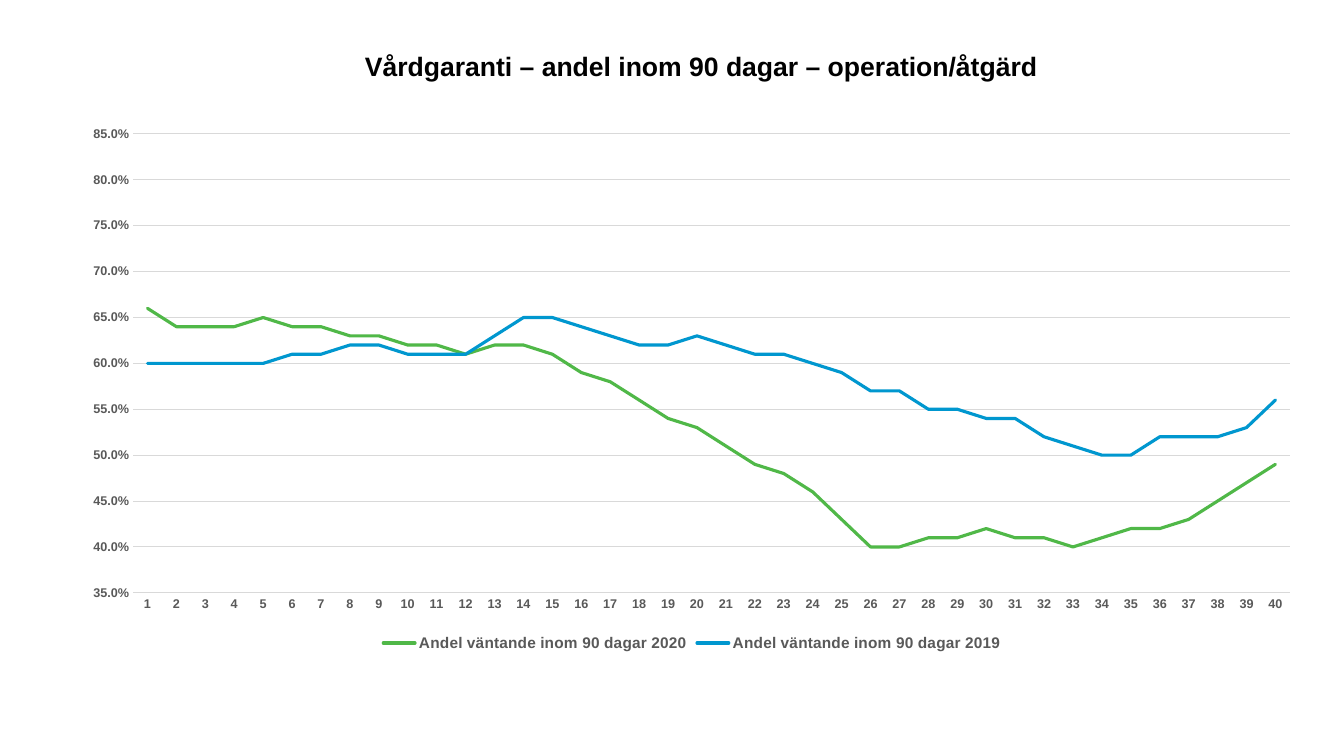
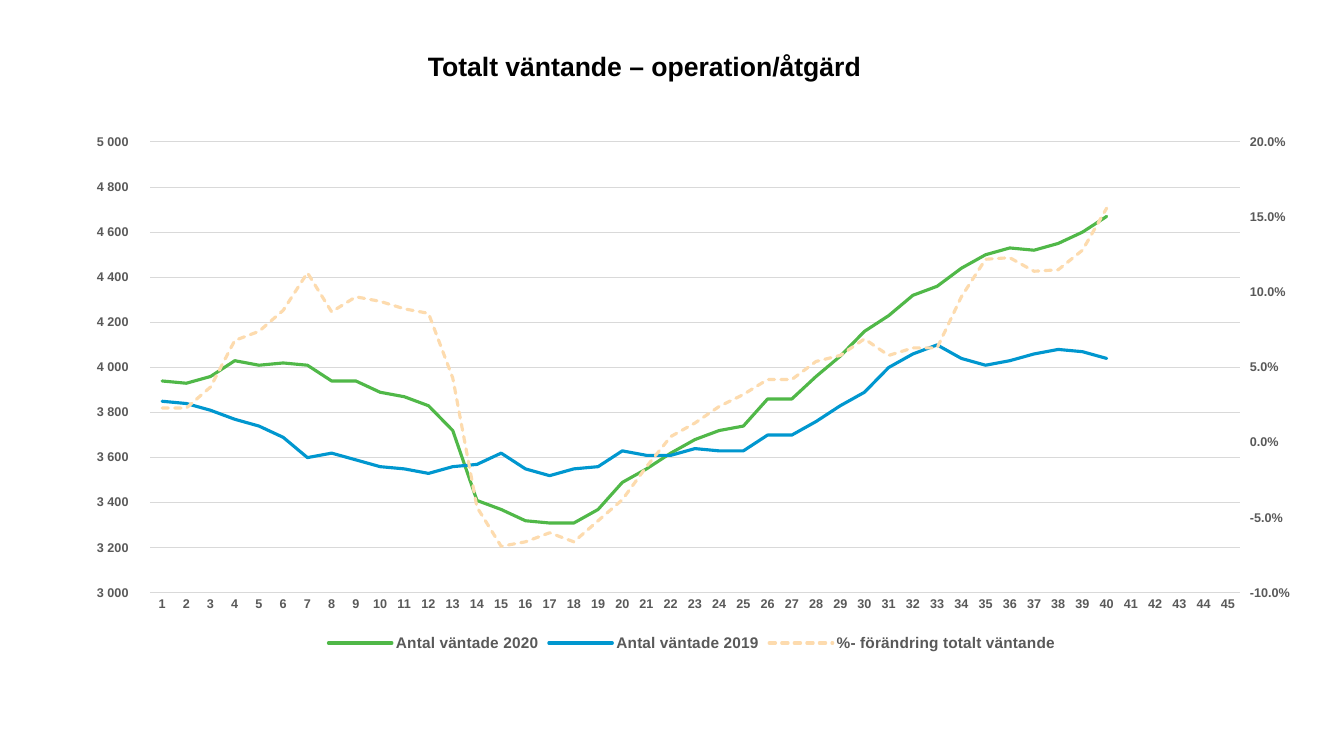
from copy import deepcopy

from lxml import etree
from pptx import Presentation
from pptx import util as u
from pptx.chart.data import CategoryChartData
from pptx.dml.color import RGBColor
from pptx.enum import chart as ch
from pptx.enum import dml

# Shared style
PX = 914400 / 100.8
FONT = "Arial"
BLACK, GREY, GRID = "000000", "595959", "D9D9D9"
GREEN, BLUE, PEACH = "50B848", "0097CF", "FDDBAE"
PERCENT = "0.0%"
KRONOR = r"_-* #\ ##0\ _k_r_-;\-* #\ ##0\ _k_r_-"
C_NS = "http://schemas.openxmlformats.org/drawingml/2006/chart"

# Content: boxes are left, top, width, height in px
SLIDES = [
    {
        "title": "Vårdgaranti – andel inom 90 dagar – operation/åtgärd",
        "title_box": (355, 45, 746, 42),
        "chart_box": (69, 116, 1246, 540),
        "plot_box": (133, 134, 1157, 459),
        "weeks": 40,
        "axis": (0.35, 0.85, 0.05, PERCENT),
        "series": [
            ("Andel väntande inom 90 dagar 2020", GREEN, [
                0.66, 0.64, 0.64, 0.64, 0.65, 0.64, 0.64, 0.63, 0.63, 0.62,
                0.62, 0.61, 0.62, 0.62, 0.61, 0.59, 0.58, 0.56, 0.54, 0.53,
                0.51, 0.49, 0.48, 0.46, 0.43, 0.4, 0.4, 0.41, 0.41, 0.42,
                0.41, 0.41, 0.4, 0.41, 0.42, 0.42, 0.43, 0.45, 0.47, 0.49]),
            ("Andel väntande inom 90 dagar 2019", BLUE, [
                0.6, 0.6, 0.6, 0.6, 0.6, 0.61, 0.61, 0.62, 0.62, 0.61,
                0.61, 0.61, 0.63, 0.65, 0.65, 0.64, 0.63, 0.62, 0.62, 0.63,
                0.62, 0.61, 0.61, 0.6, 0.59, 0.57, 0.57, 0.55, 0.55, 0.54,
                0.54, 0.52, 0.51, 0.5, 0.5, 0.52, 0.52, 0.52, 0.53, 0.56]),
        ],
    },
    {
        "title": "Totalt väntande – operation/åtgärd",
        "title_box": (418, 45, 690, 42),
        "chart_box": (69, 124, 1246, 532),
        "plot_box": (150, 142, 1090, 451),
        "weeks": 45,
        "axis": (3000, 5000, 200, KRONOR),
        "right_axis": (-0.1, 0.2, 0.05, PERCENT),
        "series": [
            ("Antal väntade 2020", GREEN, [
                3940, 3930, 3960, 4030, 4010, 4020, 4010, 3940, 3940, 3890,
                3870, 3830, 3720, 3410, 3370, 3320, 3310, 3310, 3370, 3490,
                3550, 3620, 3680, 3720, 3740, 3860, 3860, 3960, 4050, 4160,
                4230, 4320, 4360, 4440, 4500, 4530, 4520, 4550, 4600, 4670]),
            ("Antal väntade 2019", BLUE, [
                3850, 3840, 3810, 3770, 3740, 3690, 3600, 3620, 3590, 3560,
                3550, 3530, 3560, 3570, 3620, 3550, 3520, 3550, 3560, 3630,
                3610, 3610, 3640, 3630, 3630, 3700, 3700, 3760, 3830, 3890,
                4000, 4060, 4100, 4040, 4010, 4030, 4060, 4080, 4070, 4040]),
            ("%- förändring totalt väntande", PEACH, [
                0.023, 0.023, 0.037, 0.068, 0.074, 0.088, 0.113, 0.087, 0.097, 0.094,
                0.089, 0.086, 0.043, -0.043, -0.069, -0.066, -0.06, -0.066, -0.052, -0.038,
                -0.016, 0.004, 0.013, 0.024, 0.032, 0.042, 0.042, 0.054, 0.058, 0.069,
                0.058, 0.063, 0.063, 0.097, 0.122, 0.123, 0.114, 0.115, 0.128, 0.156]),
        ],
    },
]


def px(*lengths):
    return [u.Emu(round(n * PX)) for n in lengths]


def rgb(code):
    return RGBColor.from_string(code)


def style_font(font, size, color, bold=True):
    for name, value in {"name": FONT, "size": u.Pt(size), "bold": bold}.items():
        setattr(font, name, value)
    font.color.rgb = rgb(color)


def style_line(line, color, width):
    line.color.rgb = rgb(color)
    line.width = u.Pt(width)


def c_node(tag, val=None):
    node = etree.Element(f"{{{C_NS}}}{tag}")
    if val is not None:
        node.set("val", str(val))
    return node


def add_title(s, title, box):
    tf = s.shapes.add_textbox(*px(*box)).text_frame
    tf.word_wrap = True
    r = tf.paragraphs[0].add_run()
    r.text = title
    style_font(r.font, 19, BLACK)


def place_plot(area, plot_box, chart_box):
    """Fix the inner plot area as fractions of the chart frame."""
    for old in area.xpath("c:layout"):
        area.remove(old)
    left, top, width, height = chart_box
    x, y, w, h = plot_box
    layout = c_node("layout")
    manual = c_node("manualLayout")
    layout.append(manual)
    parts = {"layoutTarget": "inner", "xMode": "edge", "yMode": "edge",
             "x": (x - left) / width, "y": (y - top) / height,
             "w": w / width, "h": h / height}
    for tag, val in parts.items():
        manual.append(c_node(tag, val))
    area.insert(0, layout)


def add_right_axis(area, low, high, step, code):
    """Move the last series to a second pair of axes."""
    line = area.xpath("c:lineChart")[0]
    second = deepcopy(line)
    line.remove(line.xpath("c:ser")[-1])
    for ser in second.xpath("c:ser")[:-1]:
        second.remove(ser)
    line.addnext(second)

    cat, val = area.xpath("c:catAx")[0], area.xpath("c:valAx")[0]
    right, hidden = deepcopy(val), deepcopy(cat)
    val.addnext(right)
    right.addnext(hidden)
    ids = {cat.xpath("c:axId")[0].get("val"): "5001",
           val.xpath("c:axId")[0].get("val"): "5002"}
    for part in (second, right, hidden):
        for node in part.xpath("c:axId | c:crossAx"):
            node.set("val", ids[node.get("val")])

    right.remove(right.xpath("c:majorGridlines")[0])
    values = {"c:scaling/c:min": low, "c:scaling/c:max": high,
              "c:majorUnit": step, "c:crosses": "max", "c:axPos": "r"}
    for where, value in values.items():
        right.xpath(where)[0].set("val", str(value))
    right.xpath("c:numFmt")[0].set("formatCode", code)
    right.xpath("c:majorTickMark")[0].set("val", "out")
    hidden.xpath("c:delete")[0].set("val", "1")


def add_line_chart(s, item):
    weeks = item["weeks"]
    data = CategoryChartData()
    data.categories = [str(n) for n in range(1, weeks + 1)]
    for name, _, values in item["series"]:
        data.add_series(name, values + [None] * (weeks - len(values)))
    chart = s.shapes.add_chart(
        ch.XL_CHART_TYPE.LINE, *px(*item["chart_box"]), data).chart
    style_font(chart.font, 10, BLACK, False)
    chart.has_title = False
    chart.has_legend = True
    chart.legend.position = ch.XL_LEGEND_POSITION.BOTTOM
    chart.legend.include_in_layout = False
    style_font(chart.legend.font, 11, GREY)

    # Series
    plot = chart.plots[0]
    plot.vary_by_categories = False
    for ser, (_, color, _) in zip(plot.series, item["series"]):
        ser.smooth = False
        style_line(ser.format.line, color, 2.25)
    for ln in chart.element.xpath(".//c:ser/c:spPr/a:ln"):
        ln.set("cap", "rnd")

    # Axes
    cat, val = chart.category_axis, chart.value_axis
    for axis in (cat, val):
        axis.major_tick_mark = axis.minor_tick_mark = ch.XL_TICK_MARK.NONE
        style_font(axis.tick_labels.font, 9, GREY)
    style_line(cat.format.line, GRID, 0.75)
    val.format.line.fill.background()
    val.has_major_gridlines = True
    style_line(val.major_gridlines.format.line, GRID, 0.75)
    val.minimum_scale, val.maximum_scale, val.major_unit, code = item["axis"]
    val.tick_labels.number_format = code
    val.tick_labels.number_format_is_linked = False

    area = chart.element.xpath(".//c:plotArea")[0]
    val_ax = area.xpath("c:valAx")[0]
    if not val_ax.xpath("c:crossBetween"):
        val_ax.xpath("c:crosses")[0].addnext(c_node("crossBetween", "between"))
    place_plot(area, item["plot_box"], item["chart_box"])
    if "right_axis" in item:
        plot.series[-1].format.line.dash_style = dml.MSO_LINE.SQUARE_DOT
        add_right_axis(area, *item["right_axis"])


def main():
    prs = Presentation()
    prs.slide_width, prs.slide_height = px(1344, 756)
    for item in SLIDES:
        s = prs.slides.add_slide(prs.slide_layouts[6])
        add_title(s, item["title"], item["title_box"])
        add_line_chart(s, item)
    prs.save("out.pptx")


if __name__ == "__main__":
    main()
